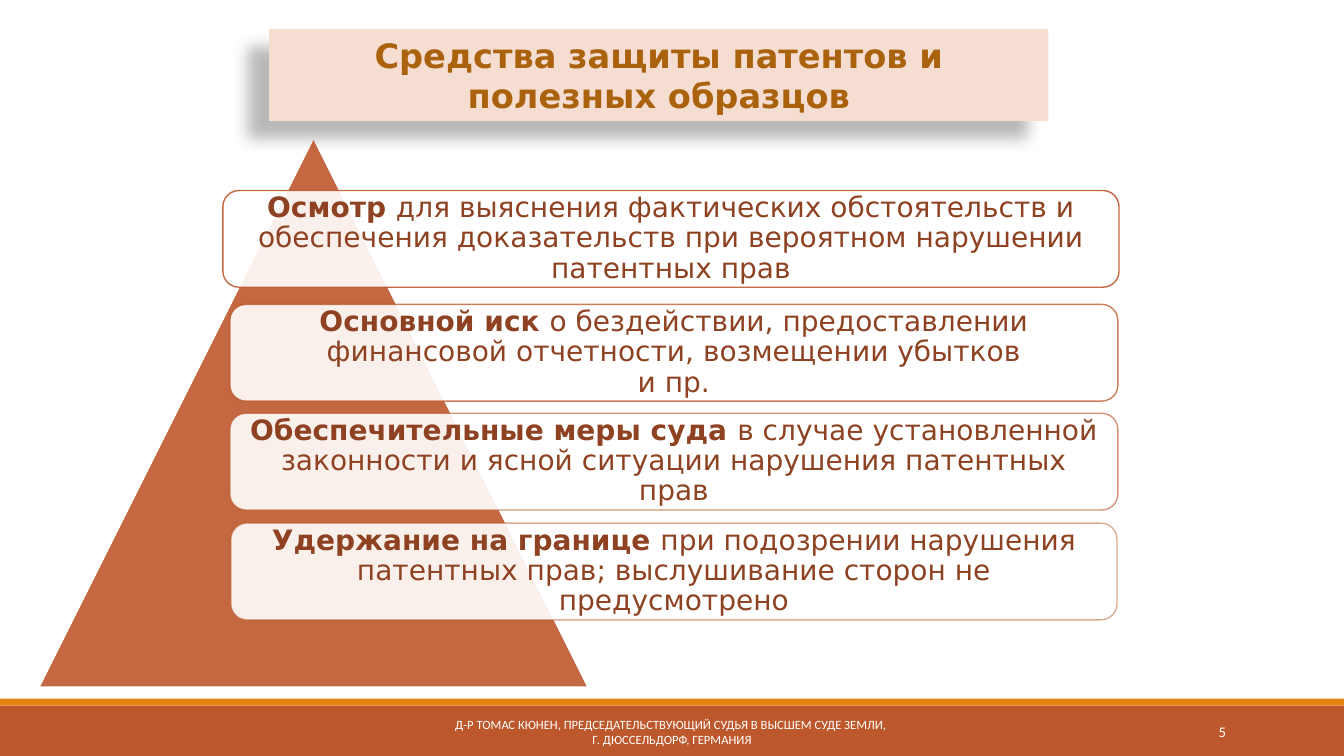
from lxml.etree import SubElement
from pptx import Presentation
from pptx.dml.color import RGBColor
from pptx.enum.shapes import MSO_SHAPE as SHAPE
from pptx.enum.text import MSO_ANCHOR as ANCHOR, PP_ALIGN as ALIGN
from pptx.oxml.ns import qn
from pptx.util import Inches, Pt

prs = Presentation()
prs.slide_width, prs.slide_height = Inches(13.33), Inches(7.5)
COL, ROW = prs.slide_width / 100, prs.slide_height / 100
s = prs.slides.add_slide(prs.slide_layouts[6])


def paint(fill, color, alpha=100):
    fill.solid()
    fill.fore_color.rgb = RGBColor.from_string(color)
    if alpha < 100:
        clr = fill._xPr.find(qn("a:solidFill"))[0]
        SubElement(clr, qn("a:alpha"), val=str(round(alpha * 1000)))


def add_box(kind, x, y, w, h, color=None, alpha=100, paras=(), size=18,
            font="DejaVu Sans", ink="FFFFFF", align=ALIGN.CENTER):
    sp = s.shapes.add_shape(kind, round(x * COL), round(y * ROW),
                            round(w * COL), round(h * ROW))
    sp.shadow.inherit = False
    sp.line.fill.background()
    if color:
        paint(sp.fill, color, alpha)
    else:
        sp.fill.background()
    tf = sp.text_frame
    tf.word_wrap = True
    tf.vertical_anchor = ANCHOR.MIDDLE
    for i, runs in enumerate(paras):
        p = tf.add_paragraph() if i else tf.paragraphs[0]
        p.alignment = align
        for text, bold in runs:
            for j, line in enumerate(text.split("\n")):
                if j:
                    p.add_line_break()
                r = p.add_run()
                r.text = line
                r.font.name, r.font.size, r.font.bold = font, Pt(size), bold
                paint(r.font.fill, ink)
    return sp


add_box(SHAPE.RECTANGLE, 0, 93.33, 100, 6.67, "BD582C")
add_box(SHAPE.RECTANGLE, 0, 92.4, 100, 0.93, "E48312")
add_box(SHAPE.RECTANGLE, 81.23, 94.13, 10.73, 5.33, paras=[[("5", False)]],
        size=10.5, font="Calibri", align=ALIGN.RIGHT)

title = add_box(SHAPE.RECTANGLE, 20.03, 3.87, 57.98, 12.13, "F5DDD2",
                paras=[[("Средства защиты патентов и полезных образцов", True)]],
                size=24, ink="AB620D")
effects = title._element.spPr.find(qn("a:effectLst"))
shadow = SubElement(effects, qn("a:outerShdw"), blurRad=str(Pt(11.8)),
                    dist=str(Pt(19.7)), dir=str(141 * 60000), algn="ctr", rotWithShape="0")
black = SubElement(shadow, qn("a:srgbClr"), val="000000")
SubElement(black, qn("a:alpha"), val="28000")

add_box(SHAPE.ISOSCELES_TRIANGLE, 3, 18.53, 40.65, 72.27, "BD582C", 90)

cards = [
    (16.58, 25.2, 66.68, "Осмотр ",
     "для выяснения фактических обстоятельств и обеспечения доказательств "
     "при вероятном нарушении патентных прав"),
    (17.1, 40.27, 66.08, "Основной иск ",
     "о бездействии, предоставлении финансовой отчетности, возмещении убытков\nи пр."),
    (17.1, 54.67, 66.08, "Обеспечительные меры суда ",
     "в случае установленной законности и ясной ситуации нарушения патентных прав"),
    (17.18, 69.2, 65.93, "Удержание на границе ",
     "при подозрении нарушения патентных прав; выслушивание сторон не предусмотрено"),
]
for i, (x, y, w, term, rest) in enumerate(cards):
    card = add_box(SHAPE.ROUNDED_RECTANGLE, x, y, w, 12.8, "FFFFFF", 90,
                   [[(term, True), (rest, False)]], 20, ink="8E4221")
    paint(card.line.fill, "BD582C", 90 - 40 * i / 3)
    card.line.width = Pt(1)
    tf = card.text_frame
    tf.margin_left = tf.margin_right = tf.margin_top = tf.margin_bottom = Inches(0.08)
    tf.paragraphs[0].line_spacing = 0.9

add_box(SHAPE.RECTANGLE, 30.23, 94.13, 39.53, 5.33, size=9, font="Calibri", paras=[
    [("Д-Р ТОМАС КЮНЕН, ПРЕДСЕДАТЕЛЬСТВУЮЩИЙ СУДЬЯ В ВЫСШЕМ СУДЕ ЗЕМЛИ, ", False)],
    [("Г. ДЮССЕЛЬДОРФ, ГЕРМАНИЯ", False)],
])

prs.save("out.pptx")
